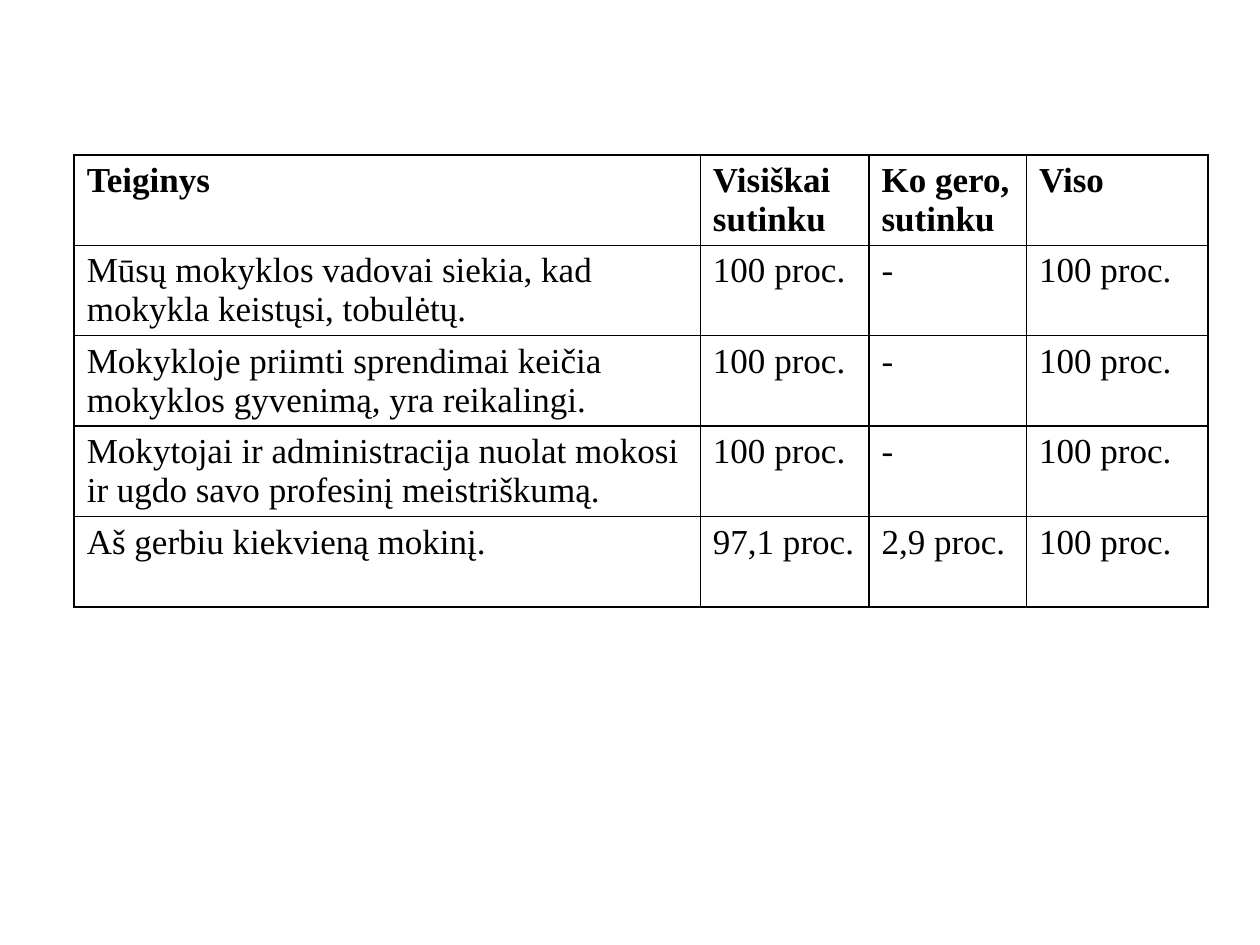
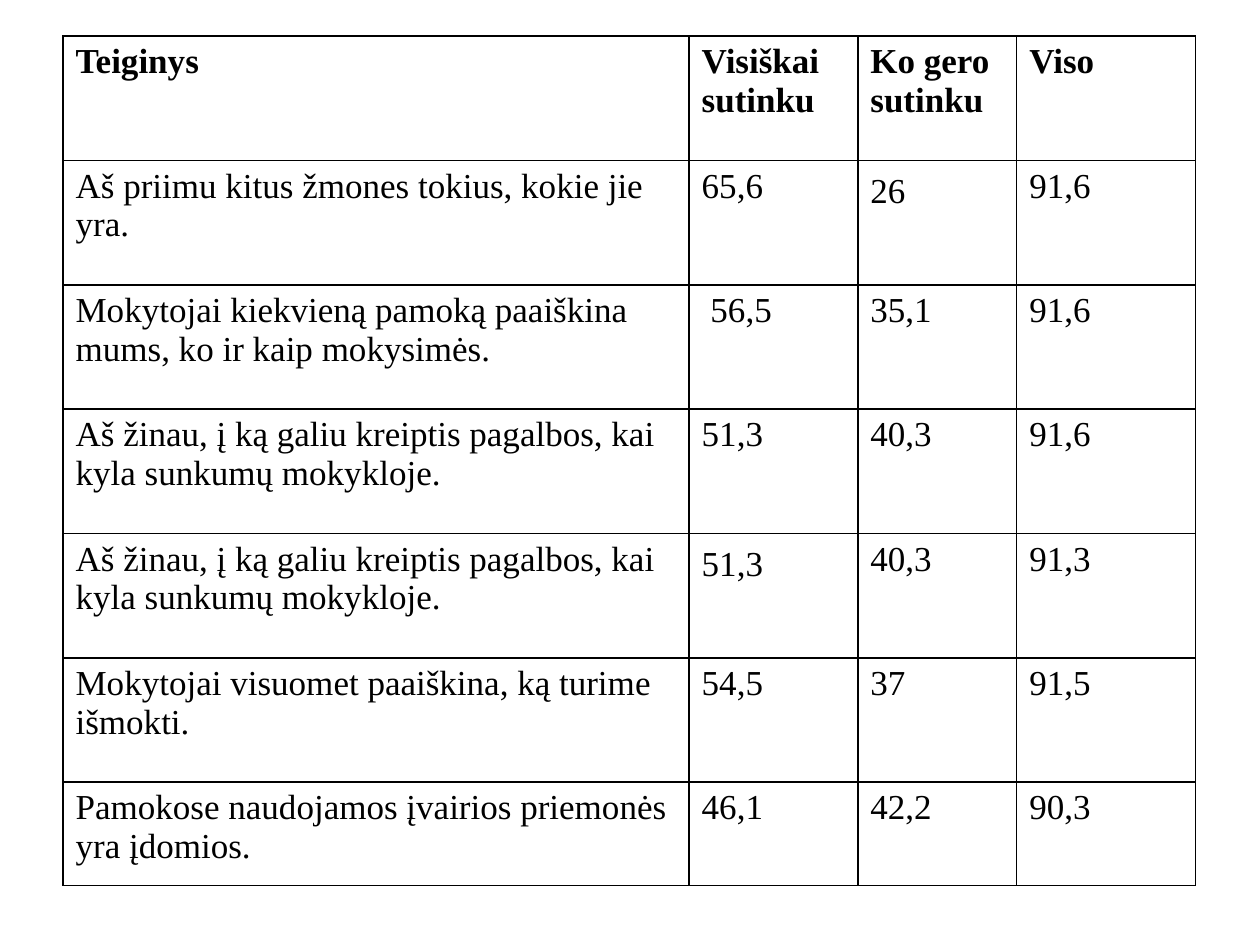
import pptx
import pptx.dml.color
import pptx.oxml
import pptx.oxml.ns
import pptx.util
from dataclasses import dataclass

Pt = pptx.util.Pt


@dataclass(frozen=True)
class Theme:
    font: str = "Times New Roman"
    text_size: float = 20
    ink: str = "000000"
    border_width: float = 1
    loose_spacing: float = 1.15
    loose_space_after: float = 10


THEME = Theme()
INK = pptx.dml.color.RGBColor.from_string(THEME.ink)


def draw_borders(cell):
    cell_properties = cell._tc.get_or_add_tcPr()
    for side in ("lnL", "lnR", "lnT", "lnB"):
        cell_properties.append(pptx.oxml.parse_xml(
            f'<a:{side} {pptx.oxml.ns.nsdecls("a")} w="{Pt(THEME.border_width)}">'
            f'<a:solidFill><a:srgbClr val="{THEME.ink}"/></a:solidFill></a:{side}>'
        ))


# "loose" lists the (row, column) cells set with wider line spacing.
surveys = [
    {
        "left": 42.4, "top": 88.5,
        "columns": [357.8, 96.4, 90, 103.8],
        "rows": [51.65] * 5,
        "loose": set(),
        "answers": [
            ("Teiginys", "Visiškai sutinku", "Ko gero, sutinku", "Viso"),
            ("Mūsų mokyklos vadovai siekia, kad mokykla keistųsi, tobulėtų.",
             "100 proc.", "-", "100 proc."),
            ("Mokykloje priimti sprendimai keičia mokyklos gyvenimą, yra reikalingi.",
             "100 proc.", "-", "100 proc."),
            ("Mokytojai ir administracija nuolat mokosi ir ugdo savo profesinį meistriškumą.",
             "100 proc.", "-", "100 proc."),
            ("Aš gerbiu kiekvieną mokinį.", "97,1 proc.", "2,9 proc.", "100 proc."),
        ],
    },
    {
        "left": 36, "top": 20.7,
        "columns": [357.8, 96.4, 90.8, 102.2],
        "rows": [71.05] * 6 + [59.1],
        "loose": {(1, 2), (4, 1)},
        "answers": [
            ("Teiginys", "Visiškai sutinku", "Ko gero sutinku", "Viso"),
            ("Aš priimu kitus žmones tokius, kokie jie yra.", "65,6", "26", "91,6"),
            ("Mokytojai kiekvieną pamoką paaiškina mums, ko ir kaip mokysimės.",
             " 56,5", "35,1", "91,6"),
            ("Aš žinau, į ką galiu kreiptis pagalbos, kai kyla sunkumų mokykloje.",
             "51,3", "40,3", "91,6"),
            ("Aš žinau, į ką galiu kreiptis pagalbos, kai kyla sunkumų mokykloje.",
             "51,3", "40,3", "91,3"),
            ("Mokytojai visuomet paaiškina, ką turime išmokti.", "54,5", "37", "91,5"),
            ("Pamokose naudojamos įvairios priemonės yra įdomios.", "46,1", "42,2", "90,3"),
        ],
    },
]

deck = pptx.Presentation()
deck.slide_width, deck.slide_height = Pt(720), Pt(540)

for survey in surveys:
    slide = deck.slides.add_slide(deck.slide_layouts[6])
    answer_table = slide.shapes.add_table(
        len(survey["rows"]), len(survey["columns"]),
        Pt(survey["left"]), Pt(survey["top"]),
        Pt(sum(survey["columns"])), Pt(sum(survey["rows"])),
    ).table
    answer_table.first_row = False
    answer_table.horz_banding = False

    for column, width in zip(answer_table.columns, survey["columns"]):
        column.width = Pt(width)
    for row, height in zip(answer_table.rows, survey["rows"]):
        row.height = Pt(height)

    for row_index, answer in enumerate(survey["answers"]):
        for column_index, wording in enumerate(answer):
            cell = answer_table.cell(row_index, column_index)
            draw_borders(cell)
            cell.fill.background()
            paragraph = cell.text_frame.paragraphs[0]
            if (row_index, column_index) in survey["loose"]:
                paragraph.line_spacing = THEME.loose_spacing
                paragraph.space_after = Pt(THEME.loose_space_after)
            run = paragraph.add_run()
            run.text = wording
            run.font.name = THEME.font
            run.font.size = Pt(THEME.text_size)
            run.font.bold = row_index == 0
            run.font.color.rgb = INK

deck.save("out.pptx")
